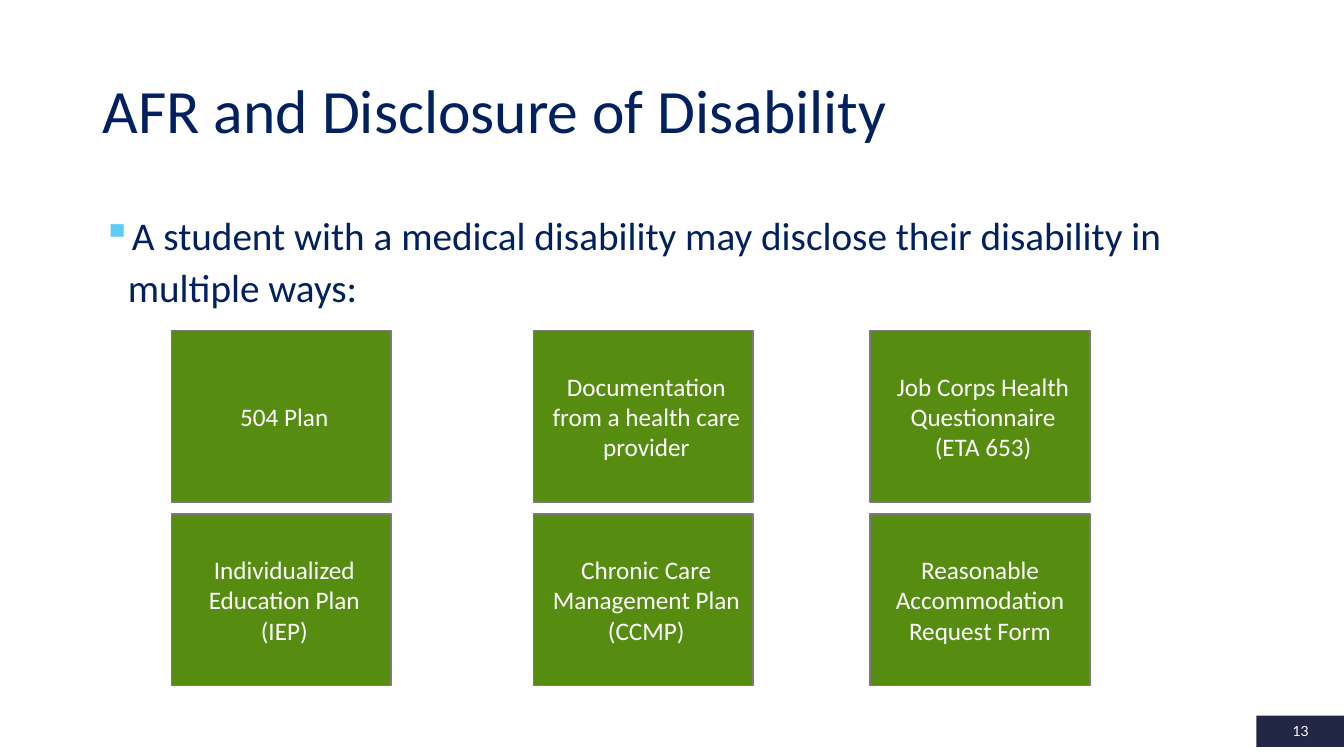
from dataclasses import dataclass

from lxml import etree
from pptx import Presentation
from pptx.dml.color import RGBColor
from pptx.enum.shapes import MSO_SHAPE
from pptx.enum.text import MSO_ANCHOR, PP_ALIGN
from pptx.oxml.ns import qn
from pptx.shapes.autoshape import Shape
from pptx.slide import Slide
from pptx.util import Inches, Pt

RECTANGLE = MSO_SHAPE.RECTANGLE
TOP, MIDDLE = MSO_ANCHOR.TOP, MSO_ANCHOR.MIDDLE
LEFT, CENTER = PP_ALIGN.LEFT, PP_ALIGN.CENTER

NAVY = RGBColor(0x00, 0x20, 0x60)
SKY = RGBColor(0x5E, 0xCC, 0xF3)
DARK_BLUE = RGBColor(0x21, 0x27, 0x45)
GREEN = RGBColor(0x56, 0x8D, 0x11)
GRAY = RGBColor(0x7A, 0x7A, 0x7A)
WHITE = RGBColor(0xFF, 0xFF, 0xFF)

COLUMN_LEFTS = (1.7, 5.29, 8.63)
FIRST_ROW_TOP, ROW_PITCH = 3.28, 1.82
CARD_WIDTH, CARD_HEIGHT = 2.18, 1.7


@dataclass(frozen=True)
class Card:
    text: str
    column: int
    row: int
    indent: float = 0.06


CARDS = (
    Card("504 Plan", 0, 0),
    Card("Individualized Education Plan (IEP)", 0, 1),
    Card("Documentation from a health care provider", 1, 0),
    Card("Chronic Care Management Plan (CCMP)", 1, 1),
    Card("Job Corps Health Questionnaire (ETA 653)", 2, 0),
    Card("Reasonable Accommodation Request Form", 2, 1, indent=0),
)


def write_text(shape: Shape, text: str, *, size: float, color: RGBColor,
               font: str = "Calibri", align: PP_ALIGN = LEFT,
               anchor: MSO_ANCHOR = MIDDLE, line_spacing: float = 1.0,
               indent: float = 0, hanging: float = 0, bullet: str = "") -> None:
    """Fill a shape with one formatted paragraph."""
    frame = shape.text_frame
    frame.word_wrap = True
    frame.vertical_anchor = anchor
    paragraph = frame.paragraphs[0]
    paragraph.alignment = align
    paragraph.line_spacing = line_spacing
    run = paragraph.add_run()
    run.text = text
    run.font.name = font
    run.font.size = Pt(size)
    run.font.color.rgb = color

    # Indents and bullets
    properties = paragraph._p.get_or_add_pPr()
    properties.set("marL", str(Inches(indent)))
    properties.set("indent", str(Inches(-hanging)))
    if bullet:
        bullet_color = etree.SubElement(properties, qn("a:buClr"))
        etree.SubElement(bullet_color, qn("a:srgbClr"), val=str(SKY))
        etree.SubElement(properties, qn("a:buChar"), char=bullet)


def add_text_box(slide: Slide, left: float, top: float,
                 width: float, height: float) -> Shape:
    return slide.shapes.add_textbox(
        Inches(left), Inches(top), Inches(width), Inches(height))


def add_rectangle(slide: Slide, left: float, top: float, width: float,
                  height: float, fill: RGBColor,
                  outline: RGBColor | None = None) -> Shape:
    shape = slide.shapes.add_shape(
        RECTANGLE, Inches(left), Inches(top), Inches(width), Inches(height))
    shape.shadow.inherit = False
    shape.fill.solid()
    shape.fill.fore_color.rgb = fill
    if outline is None:
        shape.line.fill.background()
    else:
        shape.line.color.rgb = outline
        shape.line.width = Pt(1)
    return shape


def add_card(slide: Slide, card: Card) -> None:
    shape = add_rectangle(
        slide, COLUMN_LEFTS[card.column], FIRST_ROW_TOP + card.row * ROW_PITCH,
        CARD_WIDTH, CARD_HEIGHT, GREEN, GRAY)
    write_text(shape, card.text, size=18, color=WHITE, align=CENTER,
               indent=card.indent)


def main() -> None:
    presentation = Presentation()
    presentation.slide_width = Inches(13.33)
    presentation.slide_height = Inches(7.5)
    slide = presentation.slides.add_slide(presentation.slide_layouts[6])

    # Title and lead-in
    title = add_text_box(slide, 0.92, 0.4, 11.5, 1.45)
    write_text(title, "AFR and Disclosure of Disability", size=44, color=NAVY,
               line_spacing=0.9)
    lead_in = add_text_box(slide, 0.92, 2, 11.5, 1.17)
    write_text(lead_in, "A student with a medical disability may disclose "
               "their disability in multiple ways:", size=28, color=NAVY,
               anchor=TOP, line_spacing=1.1, indent=0.25, hanging=0.25,
               bullet="▪")

    # Ways to disclose
    for card in CARDS:
        add_card(slide, card)

    # Slide number
    number = add_rectangle(slide, 12.46, 7.1, 0.88, 0.31, DARK_BLUE)
    write_text(number, "13", size=10, color=WHITE, font="Lato", align=CENTER)

    presentation.save("out.pptx")


if __name__ == "__main__":
    main()
